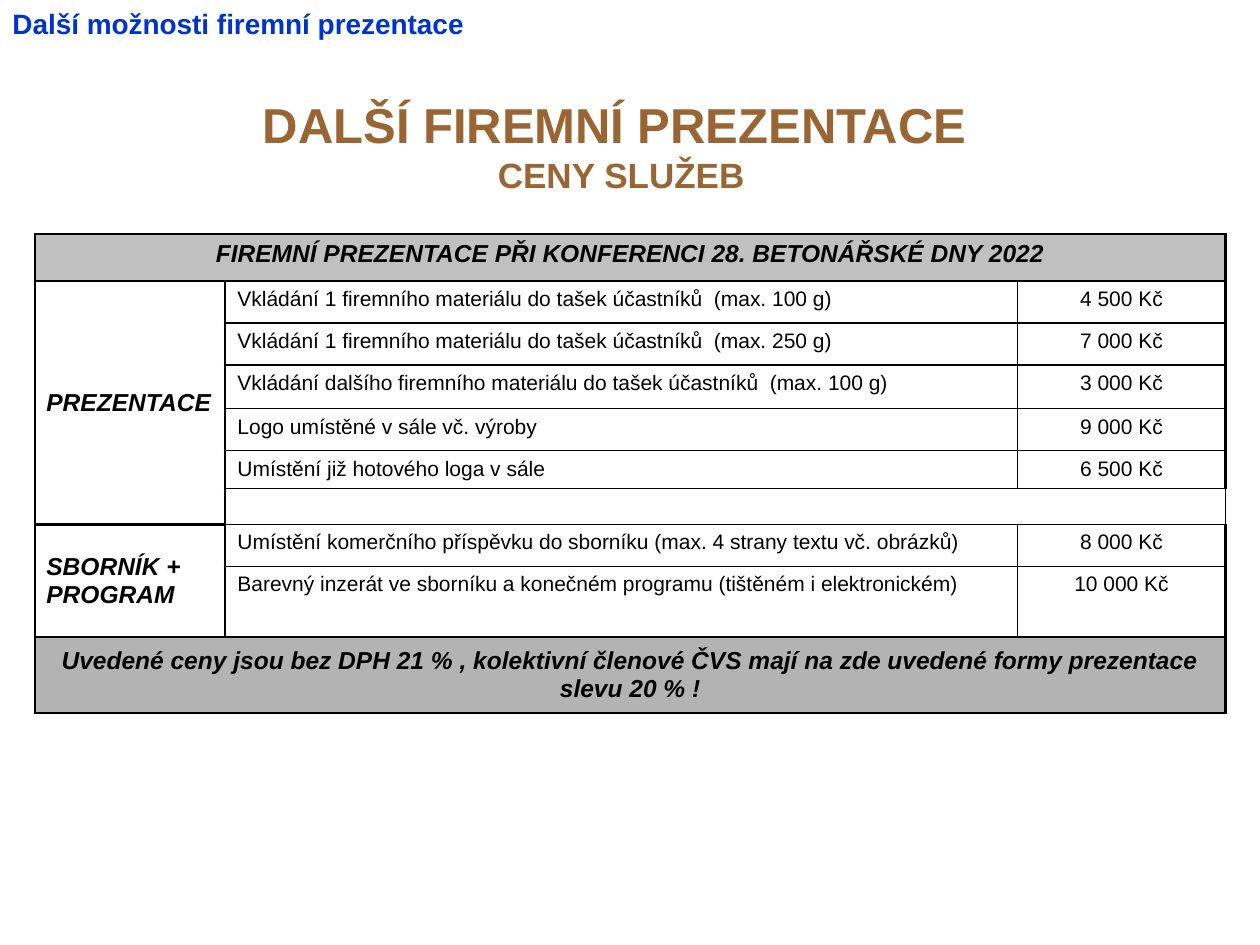
from lxml import etree
from pptx import Presentation
from pptx import util as u
from pptx.dml.color import RGBColor
from pptx.enum import text
from pptx.oxml import ns

COLORS = {"black": "000000", "brown": "996633", "blue": "0033CC",
          "header": "C0C0C0", "footer": "B3B3B3"}
CENTER, LEFT = text.PP_ALIGN.CENTER, text.PP_ALIGN.LEFT
TOP, MIDDLE = text.MSO_ANCHOR.TOP, text.MSO_ANCHOR.MIDDLE
THICK, THIN = 1.5, 1


class Deck:
    """Holds the style and the current slide."""

    font = "Arial"

    def __init__(self, width, height):
        self.prs = Presentation()
        self.prs.slide_width, self.prs.slide_height = u.Pt(width), u.Pt(height)
        self.s = self.prs.slides.add_slide(self.prs.slide_layouts[6])

    def run(self, p, words, size, color="black", bold=False, italic=False):
        r = p.add_run()
        r.text = words
        f = r.font
        f.name, f.size, f.bold, f.italic = self.font, u.Pt(size), bold, italic
        f.color.rgb = RGBColor.from_string(COLORS[color])

    def text_box(self, x, y, w, h, lines, color, align=LEFT, anchor=TOP):
        """Lines are (words, size) pairs, joined by line breaks."""
        sp = self.s.shapes.add_textbox(u.Pt(x), u.Pt(y), u.Pt(w), u.Pt(h))
        tf = sp.text_frame
        tf.word_wrap, tf.vertical_anchor = True, anchor
        p = tf.paragraphs[0]
        p.alignment = align
        for i, (words, size) in enumerate(lines):
            if i:
                p.add_line_break()
            self.run(p, words, size, color, bold=True)

    def table(self, x, y, cols, rows):
        shape = self.s.shapes.add_table(len(rows), len(cols), u.Pt(x), u.Pt(y),
                                        u.Pt(sum(cols)), u.Pt(sum(rows)))
        tbl = shape.table
        tbl.first_row = tbl.horz_banding = False
        for col, w in zip(tbl.columns, cols):
            col.width = u.Pt(w)
        for row, h in zip(tbl.rows, rows):
            row.height = u.Pt(h)
        return tbl

    def cell(self, c, words, size=14, strong=True, align=LEFT, anchor=TOP,
             fill=None, margin=7.2):
        c.margin_left = c.margin_right = u.Pt(margin)
        c.vertical_anchor = anchor
        if fill:
            c.fill.solid()
            c.fill.fore_color.rgb = RGBColor.from_string(COLORS[fill])
        else:
            c.fill.background()
        p = c.text_frame.paragraphs[0]
        p.alignment = align
        if words:
            self.run(p, words, size, bold=strong, italic=strong)
        else:
            etree.SubElement(p._p, ns.qn("a:endParaRPr"), sz=str(size * 100))

    def borders(self, c, **widths):
        """Widths by side: L, R, T, B."""
        pr = c._tc.get_or_add_tcPr()
        for i, side in enumerate("LRTB"):
            ln = etree.Element(ns.qn(f"a:ln{side}"),
                               w=str(u.Pt(widths.get(side, THICK))))
            fill = etree.SubElement(ln, ns.qn("a:solidFill"))
            etree.SubElement(fill, ns.qn("a:srgbClr"), val=COLORS["black"])
            pr.insert(i, ln)


def main():
    d = Deck(720, 540)

    # Headings
    d.text_box(31, 49, 648, 67.7, [("DALŠÍ FIREMNÍ PREZENTACE ", 28), ("CENY SLUŽEB", 20)],
               "brown", CENTER, MIDDLE)
    d.text_box(0, 0, 281, 26.6, [("Další možnosti firemní prezentace", 16)], "blue")

    # Price table: header, offers, footer
    offers = [
        ("Vkládání 1 firemního materiálu do tašek účastníků  (max. 100 g)", "4 500 Kč"),
        ("Vkládání 1 firemního materiálu do tašek účastníků  (max. 250 g)", "7 000 Kč"),
        ("Vkládání dalšího firemního materiálu do tašek účastníků  (max. 100 g)", "3 000 Kč"),
        ("Logo umístěné v sále vč. výroby", "9 000 Kč"),
        ("Umístění již hotového loga v sále", "6 500 Kč"),
        ("", ""),
        ("Umístění komerčního příspěvku do sborníku (max. 4 strany textu vč. obrázků)", "8 000 Kč"),
        ("Barevný inzerát ve sborníku a konečném programu (tištěném i elektronickém)", "10 000 Kč"),
    ]
    groups = [(1, 6, "PREZENTACE"), (7, 8, "SBORNÍK + PROGRAM")]
    last = len(offers) + 1
    tbl = d.table(20, 133.8, [108.5, 453, 118.8],
                  [26.8, 24, 24, 25, 24, 20.6, 20.6, 24, 40.3, 43.4])

    # Merged areas
    for row in (0, last):
        tbl.cell(row, 0).merge(tbl.cell(row, 2))
    for first, end, _ in groups:
        tbl.cell(first, 0).merge(tbl.cell(end, 0))

    # Cell contents
    d.cell(tbl.cell(0, 0), "FIREMNÍ PREZENTACE PŘI KONFERENCI 28. BETONÁŘSKÉ DNY 2022",
           align=CENTER, fill="header")
    d.cell(tbl.cell(last, 0), "Uvedené ceny jsou bez DPH 21 % , kolektivní členové ČVS mají "
           "na zde uvedené formy prezentace slevu 20 % !",
           align=CENTER, anchor=MIDDLE, fill="footer", margin=6.5)
    for first, _, name in groups:
        d.cell(tbl.cell(first, 0), name, anchor=MIDDLE, margin=6.5)
    for row, (offer, price) in enumerate(offers, 1):
        if not offer:
            tbl.cell(row, 1).merge(tbl.cell(row, 2))
        d.cell(tbl.cell(row, 1), offer, 11 if not offer else 12, strong=False)
        if price:
            d.cell(tbl.cell(row, 2), price, 12, strong=False, align=CENTER)

    # Borders: thick frame, thin lines between offers
    for row in range(last + 1):
        for col in range(3):
            sides = {}
            if col and 0 < row < last:
                sides = {"T": THICK if row == 1 else THIN,
                         "B": THICK if row == last - 1 else THIN,
                         "R" if col == 1 else "L": THIN}
            d.borders(tbl.cell(row, col), **sides)

    d.prs.save("out.pptx")


if __name__ == "__main__":
    main()
